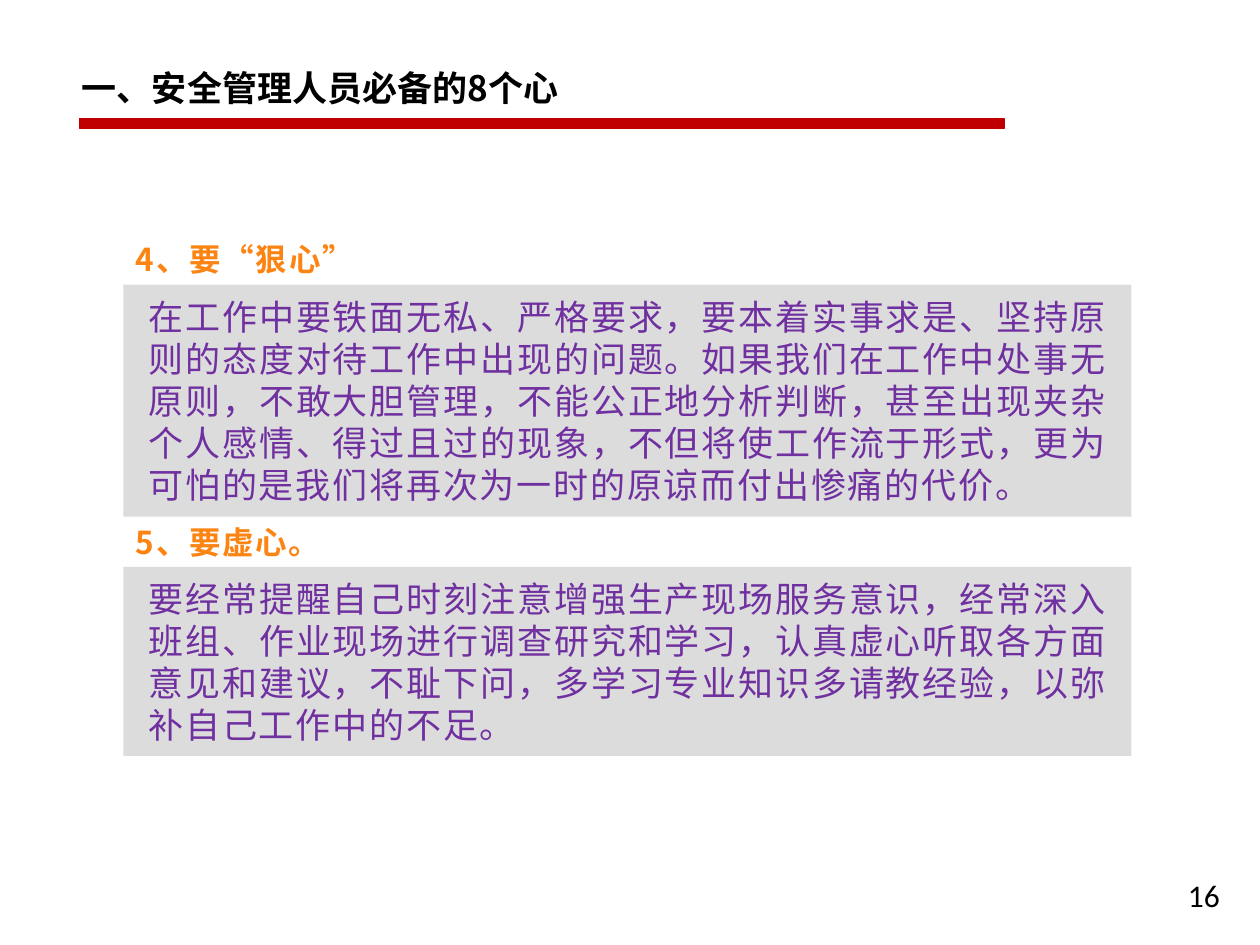
"""Build the slide on the qualities a safety manager needs."""
from dataclasses import dataclass

from lxml.etree import SubElement
from pptx import Presentation
from pptx.dml.color import RGBColor as RGB
from pptx.enum.shapes import MSO_SHAPE as Shape
from pptx.enum.text import MSO_ANCHOR as Anchor, MSO_AUTO_SIZE as Fit, PP_ALIGN as Align
from pptx.oxml.ns import qn
from pptx.util import Inches, Pt


@dataclass(frozen=True)
class Theme:
    """Hold the colours, fonts and type sizes."""
    black: RGB = RGB(0, 0, 0)
    red: RGB = RGB.from_string("C00000")
    orange: RGB = RGB.from_string("FB8412")
    purple: RGB = RGB.from_string("7030A0")
    grey: RGB = RGB.from_string("DCDCDD")
    face: str = "Noto Sans CJK SC"
    digit: str = "Calibri"
    large: int = 20
    small: int = 18


THEME = Theme()
LEFT, WIDTH, HEAD = 0.98, 8, 0.4
POINTS = (
    ("4、要“狠心”", 1.86, 2.05, 1.84,
     "在工作中要铁面无私、严格要求，要本着实事求是、坚持原则的态度对待工作中出现的问题。"
     "如果我们在工作中处事无原则，不敢大胆管理，不能公正地分析判断，甚至出现夹杂个人感情、"
     "得过且过的现象，不但将使工作流于形式，更为可怕的是我们将再次为一时的原谅而付出惨痛的代价。"),
    ("5、要虚心。", 4.1, 1.7, 1.5,
     "要经常提醒自己时刻注意增强生产现场服务意识，经常深入班组、作业现场进行调查研究和学习，"
     "认真虚心听取各方面意见和建议，不耻下问，多学习专业知识多请教经验，以弥补自己工作中的不足。"),
)


def box(*sizes):
    """Turn numbers into lengths in inches."""
    return [Inches(size) for size in sizes]


def write(frame, text, size, color, bold=False, face=THEME.face, gap=0, align=Align.LEFT):
    """Write one styled paragraph and return it."""
    frame.text = text
    para = frame.paragraphs[0]
    para.alignment = align
    font = para.font
    font.name, font.size, font.bold = face, Pt(size), bold
    font.color.rgb = color
    props = para._p.get_or_add_pPr().get_or_add_defRPr()
    SubElement(props, qn("a:ea")).set("typeface", face)
    if gap:
        props.set("spc", str(gap * 100))
    return para


def add_title(slide, text):
    """Place the title above the rule."""
    title = slide.shapes.title
    title.left, title.top, title.width, title.height = box(0.55, 0.31, 5.77, 0.55)
    frame = title.text_frame
    frame.auto_size, frame.vertical_anchor = Fit.NONE, Anchor.TOP
    para = write(frame, text, THEME.large, THEME.black, bold=True)
    para.line_spacing, para.space_before = 1.5, Pt(4)
    props = para._p.get_or_add_pPr()
    props.set("marL", str(Inches(0.29)))
    props.set("indent", str(Inches(-0.29)))


def add_rect(shapes, place, fill):
    """Add a plain filled rectangle."""
    rect = shapes.add_shape(Shape.RECTANGLE, *box(*place))
    rect.shadow.inherit = False
    rect.fill.solid()
    rect.fill.fore_color.rgb = fill
    rect.line.fill.background()
    return rect


def add_rule(slide):
    """Add the red rule below the title."""
    rule = add_rect(slide.shapes, (0.63, 0.94, 7.34, 0.08), THEME.red)
    rule.line.color.rgb = THEME.red
    rule.line.width = Pt(0.75)


def add_label(shapes, place, text, wrap=False, **style):
    """Add a small text box that fits its text."""
    frame = shapes.add_textbox(*box(*place)).text_frame
    frame.word_wrap, frame.auto_size = wrap, Fit.SHAPE_TO_FIT_TEXT
    write(frame, text, THEME.small, **style)


def add_point(shapes, head, top, width, height, body):
    """Add a heading with its grey panel below."""
    add_label(shapes, (LEFT, top, width, HEAD), head,
              color=THEME.orange, bold=True, gap=1)
    panel = add_rect(shapes, (LEFT, top + HEAD, WIDTH, height), THEME.grey)
    frame = panel.text_frame
    frame.word_wrap, frame.auto_size = True, Fit.SHAPE_TO_FIT_TEXT
    frame.vertical_anchor = Anchor.MIDDLE
    frame.margin_left, frame.margin_right = box(0.2, 0.19)
    frame.margin_top = frame.margin_bottom = Inches(0.08)
    write(frame, body, THEME.large, THEME.purple, gap=1, align=Align.JUSTIFY)


def main():
    """Build and save the slide."""
    deck = Presentation()
    deck.slide_width, deck.slide_height = box(10, 7.5)
    slide = deck.slides.add_slide(deck.slide_layouts[5])
    add_label(slide.shapes, (9.33, 6.9, 0.63, 0.4), "16", wrap=True,
              color=THEME.black, face=THEME.digit)
    add_rule(slide)
    add_title(slide, "一、安全管理人员必备的8个心")
    group = slide.shapes.add_group_shape()
    for point in POINTS:
        add_point(group.shapes, *point)
    deck.save("out.pptx")


if __name__ == "__main__":
    main()
